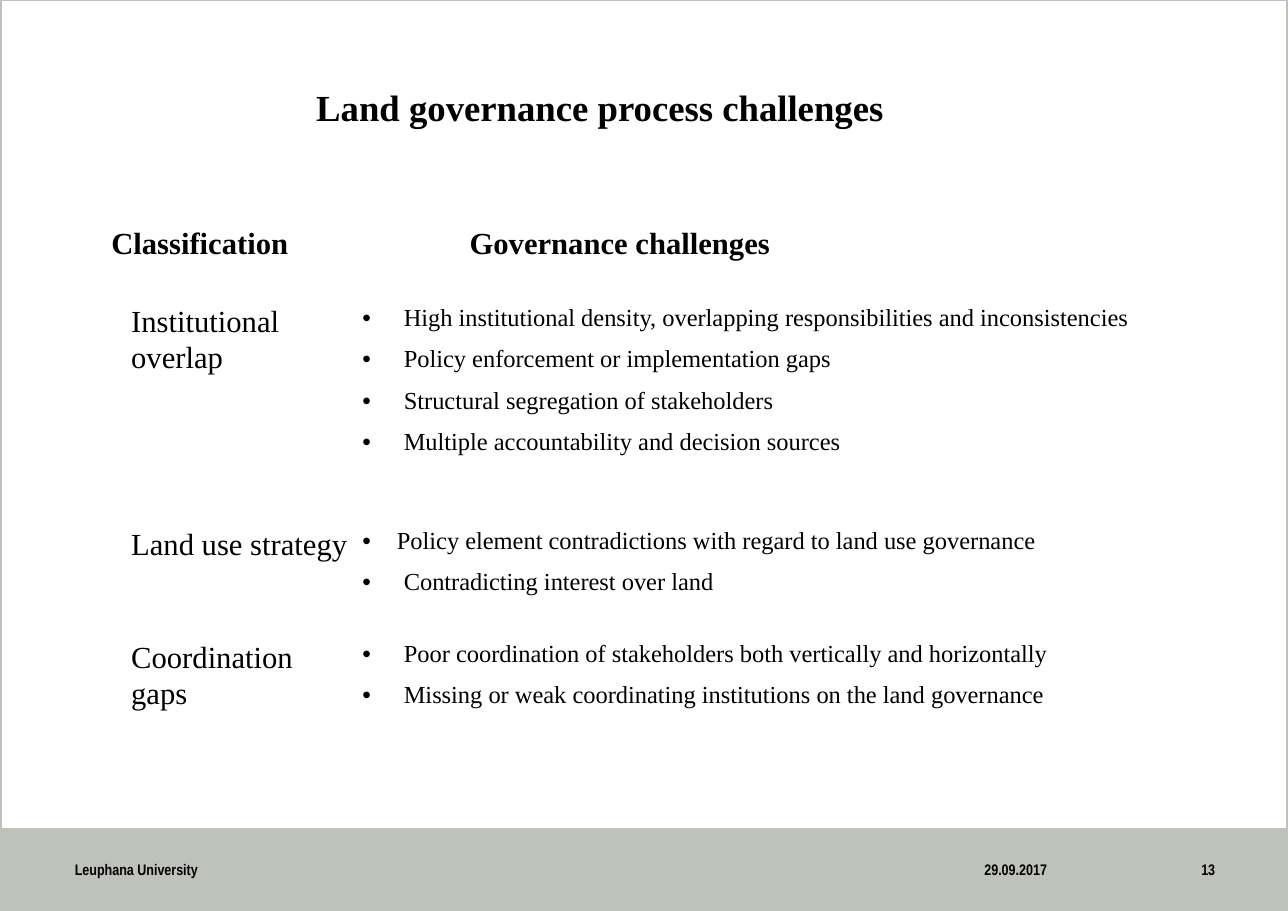
from dataclasses import dataclass

from lxml import etree
from pptx import Presentation
from pptx.dml.color import RGBColor
from pptx.enum import shapes, text
from pptx.oxml import ns
from pptx.util import Pt

COLORS = {"text": "000000", "band": "BFC2BA"}
SERIF, NARROW = "Times New Roman", "Arial Narrow"
SLIDE_WIDTH, SLIDE_HEIGHT = 841.68, 595.44
BAND_TOP = 541.3
COLUMN_WIDTHS = (13, 151.2, 560.9)
ROW_HEIGHTS = (51.1, 145.4, 74.2, 102.2)
NO_STYLE_NO_GRID = "{2D5ABB26-0587-4C30-8999-92F81FD0307C}"
HEADING_INDENT = 70
BULLET_INDENT = 27
TAB_STOP = 36
LEFT, CENTER, RIGHT = text.PP_ALIGN.LEFT, text.PP_ALIGN.CENTER, text.PP_ALIGN.RIGHT


@dataclass(frozen=True)
class Label:
    words: str
    left: float
    top: float
    width: float
    height: float
    size: int
    font: str
    align: text.PP_ALIGN
    anchor: text.MSO_ANCHOR
    margins: tuple[float, float, float, float]
    line_spacing: float = 1.0


@dataclass(frozen=True)
class Category:
    name: str
    challenges: tuple[str, ...]
    first_indent: float = BULLET_INDENT


def footer(words: str, left: float, width: float, align: text.PP_ALIGN,
           margins: tuple[float, float, float, float]) -> Label:
    return Label(words, left, 555.8, width, 25.2, 10, NARROW, align,
                 text.MSO_ANCHOR.MIDDLE, margins)


LABELS = (
    Label("Land governance process challenges", 18, 59, 748.1, 48.2, 24, SERIF,
          CENTER, text.MSO_ANCHOR.TOP, (0, 0, 0, 0), 0.9),
    footer("13", 738.7, 55.4, RIGHT, (7.2, 3.6, 0, 3.6)),
    footer("Leuphana University", 41, 375.8, LEFT, (7.9, 3.6, 7.9, 3.6)),
    footer("29.09.2017", 596.9, 94.3, RIGHT, (7.2, 3.6, 7.2, 3.6)),
)

CATEGORIES = (
    Category("Institutional overlap", (
        "High institutional density, overlapping responsibilities and inconsistencies",
        "Policy enforcement or implementation gaps",
        "Structural segregation of stakeholders",
        "Multiple accountability and decision sources",
    )),
    Category("Land use strategy", (
        "Policy element contradictions with regard to land use governance",
        "Contradicting interest over land",
    ), first_indent=22.5),
    Category("Coordination gaps", (
        "Poor coordination of stakeholders both vertically and horizontally",
        "Missing or weak coordinating institutions on the land governance",
    )),
)


def color(name: str) -> RGBColor:
    return RGBColor.from_string(COLORS[name])


def set_margins(target, margins: tuple[float, float, float, float]) -> None:
    """Set left, top, right and bottom margins of a text frame or cell."""
    (target.margin_left, target.margin_top,
     target.margin_right, target.margin_bottom) = map(Pt, margins)


def add_run(paragraph, words: str, size: int, font: str, bold: bool) -> None:
    run = paragraph.add_run()
    run.text = words
    run.font.size = Pt(size)
    run.font.name = font
    run.font.bold = bold
    run.font.color.rgb = color("text")


def add_rectangle(slide, top: float, height: float):
    shape = slide.shapes.add_shape(shapes.MSO_SHAPE.RECTANGLE, 0, Pt(top),
                                   Pt(SLIDE_WIDTH), Pt(height))
    shape.shadow.inherit = False
    return shape


def add_label(slide, label: Label) -> None:
    shape = slide.shapes.add_textbox(Pt(label.left), Pt(label.top),
                                     Pt(label.width), Pt(label.height))
    frame = shape.text_frame
    frame.word_wrap = True
    frame.vertical_anchor = label.anchor
    set_margins(frame, label.margins)
    paragraph = frame.paragraphs[0]
    paragraph.alignment = label.align
    paragraph.line_spacing = label.line_spacing
    add_run(paragraph, label.words, label.size, label.font, True)


def set_indent(paragraph, left: float, first: float = 0) -> None:
    properties = paragraph._p.get_or_add_pPr()
    properties.set("marL", str(Pt(left)))
    properties.set("indent", str(Pt(first)))


def add_bullet(paragraph, indent: float) -> None:
    set_indent(paragraph, indent, -indent)
    properties = paragraph._p.get_or_add_pPr()
    etree.SubElement(properties, ns.qn("a:buFont"), typeface="Arial")
    etree.SubElement(properties, ns.qn("a:buChar"), char="•")
    tabs = etree.SubElement(properties, ns.qn("a:tabLst"))
    etree.SubElement(tabs, ns.qn("a:tab"), pos=str(Pt(TAB_STOP)), algn="l")


def write_paragraph(paragraph, words: str, size: int, bold: bool = False) -> None:
    paragraph.line_spacing = 1.07
    paragraph.space_after = Pt(8)
    add_run(paragraph, words, size, SERIF, bold)


def write_challenges(cell, category: Category) -> None:
    frame = cell.text_frame
    for index, challenge in enumerate(category.challenges):
        paragraph = frame.add_paragraph() if index else frame.paragraphs[0]
        add_bullet(paragraph, BULLET_INDENT if index else category.first_indent)
        write_paragraph(paragraph, challenge, 16)


def add_challenge_table(slide) -> None:
    frame = slide.shapes.add_table(len(ROW_HEIGHTS), len(COLUMN_WIDTHS), Pt(69.1), Pt(146.2),
                                   Pt(sum(COLUMN_WIDTHS)), Pt(sum(ROW_HEIGHTS)))
    table = frame.table
    table.first_row = table.horz_banding = False
    table._tbl.tblPr.find(ns.qn("a:tableStyleId")).text = NO_STYLE_NO_GRID
    for column, width in zip(table.columns, COLUMN_WIDTHS):
        column.width = Pt(width)
    for row, height in zip(table.rows, ROW_HEIGHTS):
        row.height = Pt(height)
    for cell in table.iter_cells():
        cell.fill.background()
        set_margins(cell, (3.6, 0.7, 3.6, 0))

    # Headings
    table.cell(0, 0).merge(table.cell(0, 1))
    write_paragraph(table.cell(0, 0).text_frame.paragraphs[0], "Classification", 20, True)
    heading = table.cell(0, 2).text_frame.paragraphs[0]
    set_indent(heading, HEADING_INDENT)
    write_paragraph(heading, "Governance challenges", 20, True)

    # Categories and their challenges
    for row, category in enumerate(CATEGORIES, start=1):
        write_paragraph(table.cell(row, 1).text_frame.paragraphs[0], category.name, 20)
        write_challenges(table.cell(row, 2), category)


def main() -> None:
    presentation = Presentation()
    presentation.slide_width = Pt(SLIDE_WIDTH)
    presentation.slide_height = Pt(SLIDE_HEIGHT)
    slide = presentation.slides.add_slide(presentation.slide_layouts[6])

    # Footer band and page frame
    band = add_rectangle(slide, BAND_TOP, SLIDE_HEIGHT - BAND_TOP)
    band.fill.solid()
    band.fill.fore_color.rgb = color("band")
    band.line.fill.background()
    border = add_rectangle(slide, 0, SLIDE_HEIGHT)
    border.fill.background()
    border.line.color.rgb = color("band")
    border.line.width = Pt(2)

    # Title, footer texts and table
    for label in LABELS:
        add_label(slide, label)
    add_challenge_table(slide)
    presentation.save("out.pptx")


if __name__ == "__main__":
    main()
